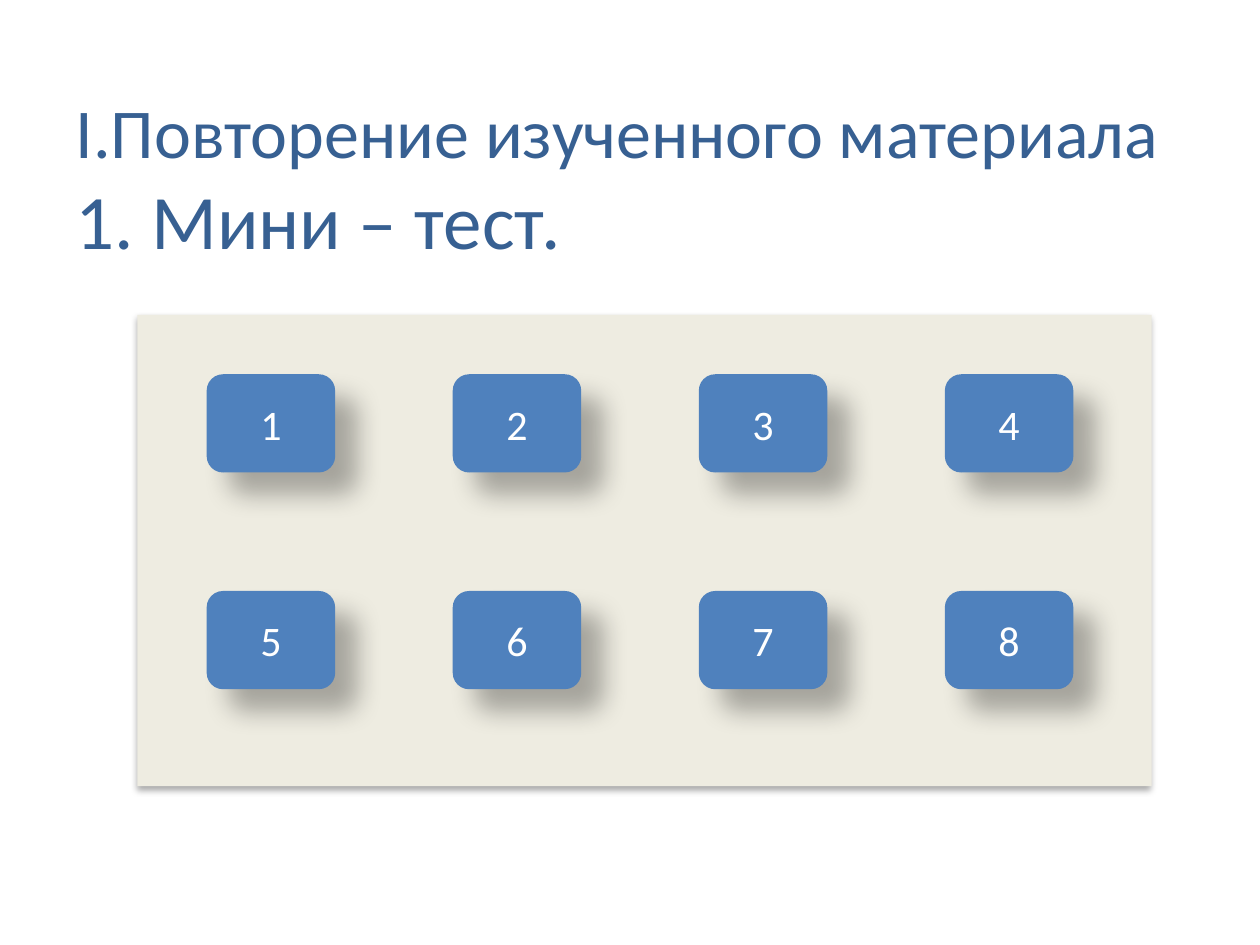
from lxml import etree
from pptx import Presentation
from pptx.dml.color import RGBColor
from pptx.enum import shapes, text
from pptx.oxml import ns
from pptx.util import Inches, Pt

FONT = "Calibri"
NAVY = RGBColor(0x37, 0x60, 0x92)
BLUE = RGBColor(0x4F, 0x81, 0xBD)
CREAM = RGBColor(0xEE, 0xEC, 0xE1)
BLACK = RGBColor(0, 0, 0)
WHITE = RGBColor(0xFF, 0xFF, 0xFF)


def add_shadow(effects, opacity, blur, distance, angle):
    """Put an outer shadow into an effect list; blur and distance in points."""
    shadow = etree.SubElement(
        effects, ns.qn("a:outerShdw"), blurRad=str(Pt(blur)),
        dist=str(Pt(distance)), dir=str(angle * 60000), algn="tl", rotWithShape="0")
    color = etree.SubElement(shadow, ns.qn("a:srgbClr"), val=str(BLACK))
    etree.SubElement(color, ns.qn("a:alpha"), val=str(opacity * 1000))


def add_text(paragraph, wording, size, color, align, shadow=None):
    """Add a formatted run to a paragraph, with an optional text shadow."""
    paragraph.alignment = align
    run = paragraph.add_run()
    run.text = wording
    run.font.size = Pt(size)
    run.font.name = FONT
    run.font.color.rgb = color
    if shadow:
        effects = etree.Element(ns.qn("a:effectLst"))
        run.font._element.find(ns.qn("a:solidFill")).addnext(effects)
        add_shadow(effects, *shadow)


def add_block(slide, kind, box, fill, shadow):
    """Add a filled shape without outline that casts a shadow."""
    block = slide.shapes.add_shape(kind, *map(Inches, box))
    block.fill.solid()
    block.fill.fore_color.rgb = fill
    block.line.fill.background()
    block.shadow.inherit = False
    add_shadow(block._element.spPr.find(ns.qn("a:effectLst")), *shadow)
    return block


def add_heading(slide, box):
    """Place the two-line title in the given box."""
    title = slide.shapes.title
    title.left, title.top, title.width, title.height = map(Inches, box)
    title.text_frame.vertical_anchor = text.MSO_ANCHOR.MIDDLE
    paragraph = title.text_frame.paragraphs[0]
    style = dict(color=NAVY, align=text.PP_ALIGN.LEFT, shadow=(40, 3, 3, 90))
    add_text(paragraph, "I.Повторение изученного материала", size=40, **style)
    paragraph.add_line_break()
    add_text(paragraph, "1. Мини – тест.", size=44, **style)


def add_test_panel(slide, box, columns=4, rows=2):
    """Draw the panel and its grid of numbered question buttons."""
    left, top = box[:2]
    panel = add_block(slide, shapes.MSO_SHAPE.RECTANGLE, box, CREAM, (32, 3.5, 2.2, 90))
    slide.shapes.title._element.addprevious(panel._element)
    for index in range(columns * rows):
        row, column = divmod(index, columns)
        button_box = (left + 0.55 + column * 1.953, top + 0.47 + row * 1.72, 1.02, 0.78)
        button = add_block(slide, shapes.MSO_SHAPE.ROUNDED_RECTANGLE, button_box,
                           BLUE, (30, 15, 18, 45))
        button.text_frame.vertical_anchor = text.MSO_ANCHOR.MIDDLE
        add_text(button.text_frame.paragraphs[0], str(index + 1), size=24,
                 color=WHITE, align=text.PP_ALIGN.CENTER)


def main():
    """Build the mini-test slide and save it."""
    deck = Presentation()
    deck.slide_width, deck.slide_height = Inches(10), Inches(7.5)
    slide = deck.slides.add_slide(deck.slide_layouts[5])
    add_heading(slide, (0.5, 0, 9, 2.81))
    add_test_panel(slide, (1.09, 2.5, 8.05, 3.74))
    deck.save("out.pptx")


if __name__ == "__main__":
    main()
